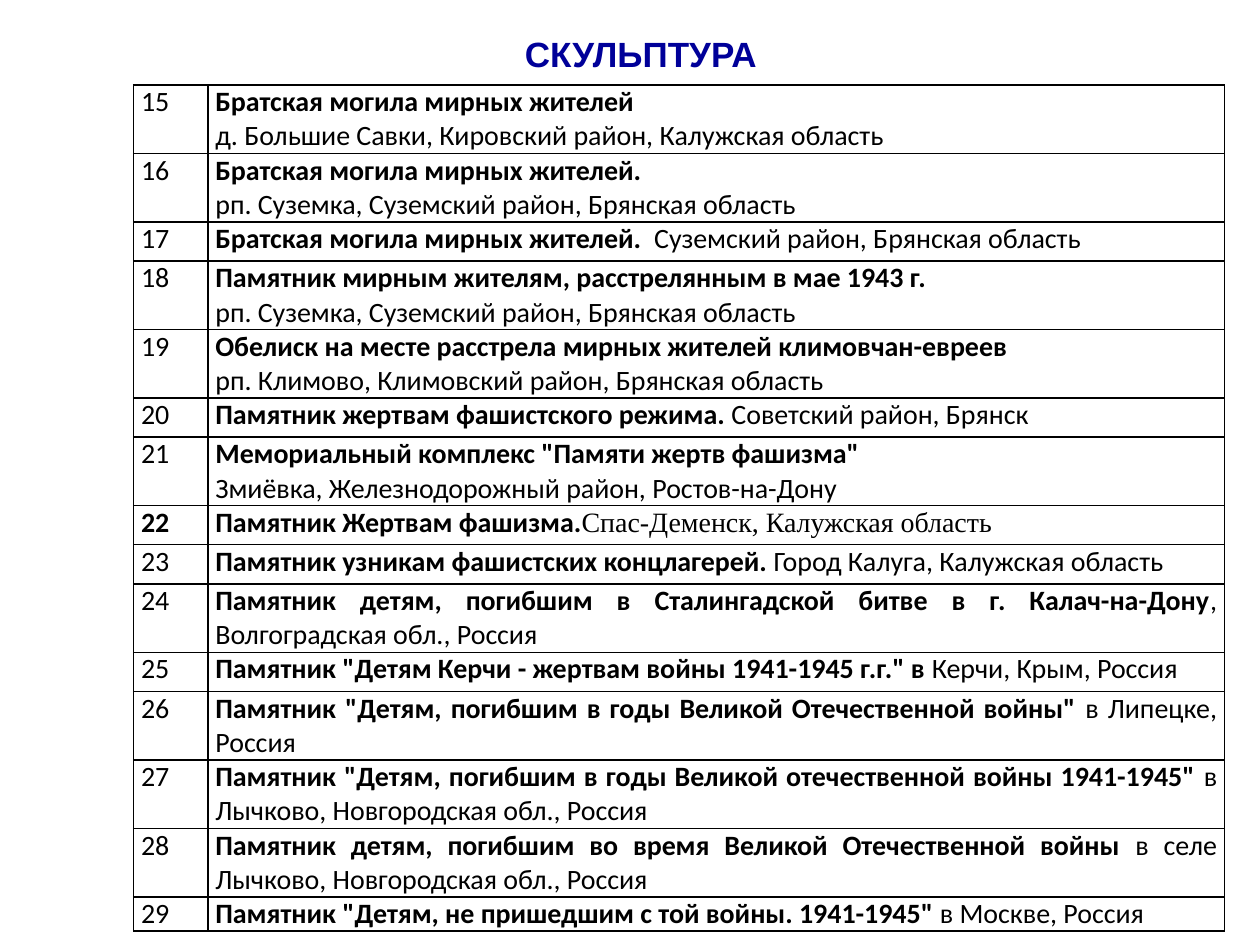
import pptx
import pptx.dml.color
import pptx.enum.text
import pptx.oxml
import pptx.oxml.ns
import pptx.util

BLACK = pptx.dml.color.RGBColor(0x00, 0x00, 0x00)
NAVY = pptx.dml.color.RGBColor(0x00, 0x00, 0x99)
ALIGN = pptx.enum.text.PP_ALIGN

SLIDE_WIDTH = pptx.util.Inches(10)
SLIDE_HEIGHT = pptx.util.Inches(7.5)
COLUMN_WIDTHS = (0.59, 8.07)
ROW_HEIGHT = 0.31
LAST_ROW_HEIGHT = 0.15
FIRST_NUMBER = 15
HIGHLIGHTED_NUMBER = 22

# Name of the monument and its place; a place after a line break gets its own paragraph.
MONUMENTS = [
    ("Братская могила мирных жителей",
     "\nд. Большие Савки, Кировский район, Калужская область"),
    ("Братская могила мирных жителей. ",
     "\nрп. Суземка, Суземский район, Брянская область"),
    ("Братская могила мирных жителей.  ", "Суземский район, Брянская область"),
    ("Памятник мирным жителям, расстрелянным в мае 1943 г.",
     "\nрп. Суземка, Суземский район, Брянская область"),
    ("Обелиск на месте расстрела мирных жителей климовчан-евреев",
     "\nрп. Климово, Климовский район, Брянская область"),
    ("Памятник жертвам фашистского режима. ", "Советский район, Брянск"),
    ('Мемориальный комплекс "Памяти жертв фашизма"',
     "\nЗмиёвка, Железнодорожный район, Ростов-на-Дону"),
    ("Памятник Жертвам фашизма.", "Спас-Деменск, Калужская область"),
    ("Памятник узникам фашистских концлагерей. ", "Город Калуга, Калужская область"),
    ("Памятник детям, погибшим в Сталингадской битве в г. Калач-на-Дону",
     ", Волгоградская обл., Россия"),
    ('Памятник "Детям Керчи - жертвам войны 1941-1945 г.г." в', " Керчи, Крым, Россия"),
    ('Памятник "Детям, погибшим в годы Великой Отечественной войны"',
     " в Липецке, Россия"),
    ('Памятник "Детям, погибшим в годы Великой отечественной войны 1941-1945"',
     " в Лычково, Новгородская обл., Россия"),
    ("Памятник детям, погибшим во время Великой Отечественной войны",
     " в селе Лычково, Новгородская обл., Россия"),
    ('Памятник "Детям, не пришедшим с той войны. 1941-1945"', " в Москве, Россия"),
]


def style_paragraph(paragraph, alignment, font_name, size, color):
    paragraph.alignment = alignment
    paragraph.font.name = font_name
    paragraph.font.size = pptx.util.Pt(size)
    paragraph.font.color.rgb = color


def add_span(paragraph, text, bold):
    span = paragraph.add_run()
    span.text = text
    span.font.bold = bold
    return span


def add_title(page, text):
    box = page.shapes.add_textbox(
        int(SLIDE_WIDTH * 0.217), int(SLIDE_HEIGHT * 0.028),
        int(SLIDE_WIDTH * 0.591), int(SLIDE_HEIGHT * 0.058))
    box.text_frame.word_wrap = True
    paragraph = box.text_frame.paragraphs[0]
    style_paragraph(paragraph, ALIGN.CENTER, "Arial", 20, NAVY)
    add_span(paragraph, text, True)


def add_borders(cell):
    """Draw a thin black line on all four sides of the cell."""
    properties = cell._tc.get_or_add_tcPr()
    for position, side in enumerate(("lnL", "lnR", "lnT", "lnB")):
        properties.insert(position, pptx.oxml.parse_xml(
            f'<a:{side} {pptx.oxml.ns.nsdecls("a")} w="{pptx.util.Pt(1)}">'
            f'<a:solidFill><a:srgbClr val="{BLACK}"/></a:solidFill></a:{side}>'))


def fill_cell(cell, lines):
    """Write lines of (text, bold) spans and give the cell its plain look."""
    cell.margin_left = cell.margin_right = pptx.util.Inches(0.06)
    cell.margin_top = cell.margin_bottom = 0
    cell.fill.background()
    add_borders(cell)
    frame = cell.text_frame
    for index, line in enumerate(lines):
        paragraph = frame.add_paragraph() if index else frame.paragraphs[0]
        style_paragraph(paragraph, ALIGN.JUSTIFY, "Calibri", 16, BLACK)
        for text, bold in line:
            add_span(paragraph, text, bold)


def monument_lines(name, place):
    if place.startswith("\n"):
        return [[(name, True)], [(place.strip("\n"), False)]]
    return [[(name, True), (place, False)]]


def add_monument_table(page):
    heights = [ROW_HEIGHT] * (len(MONUMENTS) - 1) + [LAST_ROW_HEIGHT]
    table = page.shapes.add_table(
        len(MONUMENTS), len(COLUMN_WIDTHS),
        int(SLIDE_WIDTH * 0.106), int(SLIDE_HEIGHT * 0.09),
        pptx.util.Inches(sum(COLUMN_WIDTHS)), pptx.util.Inches(sum(heights))).table
    table.first_row = table.horz_banding = False
    for column, width in zip(table.columns, COLUMN_WIDTHS):
        column.width = pptx.util.Inches(width)
    for index, (name, place) in enumerate(MONUMENTS):
        number = FIRST_NUMBER + index
        highlighted = number == HIGHLIGHTED_NUMBER
        table.rows[index].height = pptx.util.Inches(heights[index])
        fill_cell(table.cell(index, 0), [[(str(number), highlighted)]])
        monument_cell = table.cell(index, 1)
        fill_cell(monument_cell, monument_lines(name, place))
        if highlighted:
            place_span = monument_cell.text_frame.paragraphs[0].runs[-1]
            place_span.font.name = "Times New Roman"


def main():
    deck = pptx.Presentation()
    deck.slide_width = SLIDE_WIDTH
    deck.slide_height = SLIDE_HEIGHT
    page = deck.slides.add_slide(deck.slide_layouts[6])
    add_monument_table(page)
    add_title(page, "СКУЛЬПТУРА ")
    deck.save("out.pptx")


if __name__ == "__main__":
    main()
